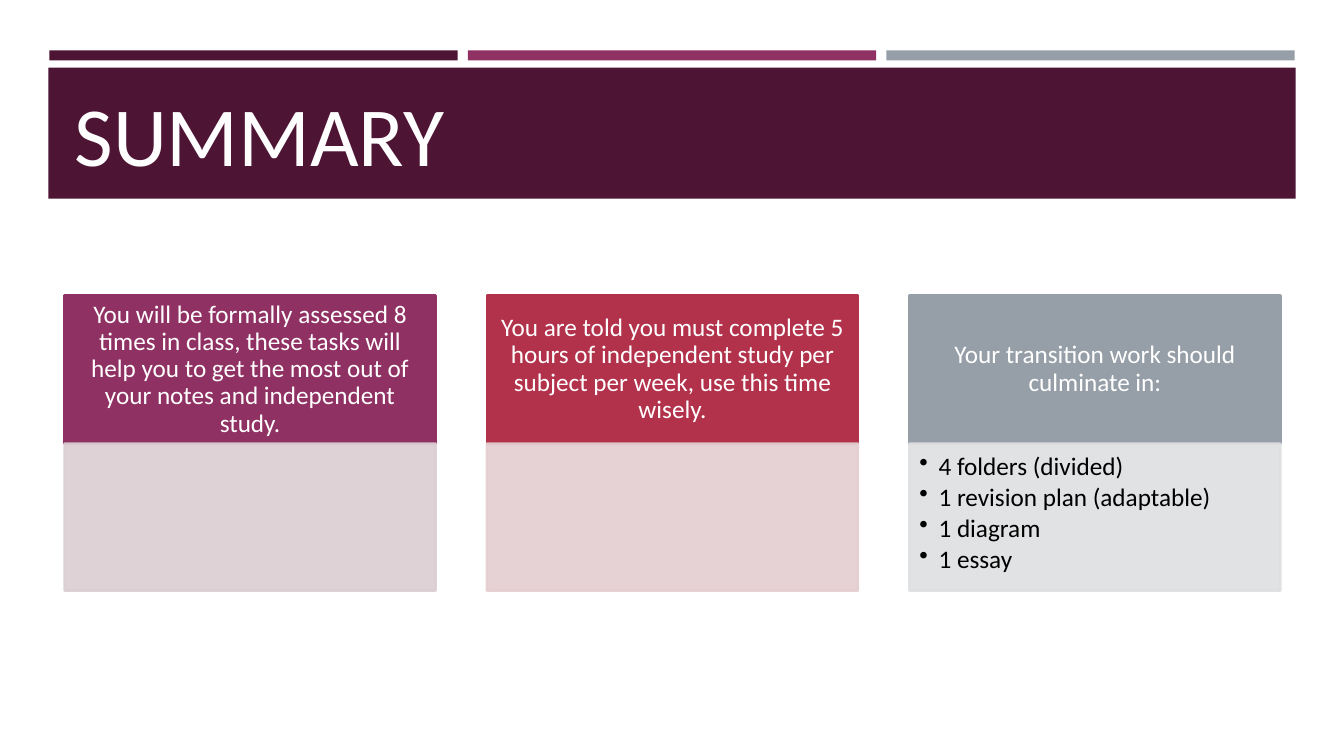
from lxml import etree
from pptx import Presentation
from pptx.dml.color import RGBColor
from pptx.enum import shapes, text
from pptx.oxml import ns
from pptx.util import Inches, Pt

COLORS = {
    "plum": "4D1434", "purple": "903163", "red": "B2324B", "grey": "969FA7",
    "pale_purple": "DBCED3", "pale_red": "E4CED0", "pale_grey": "DDDFE1",
    "title": "FFFEFF", "white": "FFFFFF", "black": "000000",
}
FONT = "Calibri"
TITLE = "SUMMARY"
STRIPES = ["plum", "purple", "grey"]
CARDS = [
    ("You will be formally assessed 8 times in class, these tasks will help you "
     "to get the most out of your notes and independent study.",
     "purple", "pale_purple", []),
    ("You are told you must complete 5 hours of independent study per subject "
     "per week, use this time wisely.",
     "red", "pale_red", []),
    ("Your transition work should culminate in:", "grey", "pale_grey",
     ["4 folders (divided)", "1 revision plan (adaptable)", "1 diagram", "1 essay"]),
]
STRIPE_LEFT, STRIPE_STEP = 0.49, 4.15
CARD_LEFT, CARD_STEP, CARD_WIDTH = 0.64, 4.19, 3.68
HEADER_TOP, HEADER_HEIGHT, BODY_HEIGHT = 2.93, 1.47, 1.46


def add_box(slide, place, color, outlined=False, alpha=None):
    """Add a flat rectangle, with an outline and transparency if asked."""
    shape = slide.shapes.add_shape(shapes.MSO_SHAPE.RECTANGLE, *map(Inches, place))
    shape.shadow.inherit = False
    rgb = RGBColor.from_string(COLORS[color])
    shape.fill.solid()
    shape.fill.fore_color.rgb = rgb
    if outlined:
        shape.line.color.rgb = rgb
        shape.line.width = Pt(1.75)
    else:
        shape.line.fill.background()
    if alpha:
        for node in shape._element.spPr.iter(ns.qn("a:srgbClr")):
            etree.SubElement(node, ns.qn("a:alpha"), val=str(alpha * 1000))
    return shape


def write(shape, lines, size, color, anchor, align, insets, spacing=0.9):
    """Fill a shape with evenly styled paragraphs."""
    frame = shape.text_frame
    frame.word_wrap = True
    frame.vertical_anchor = anchor
    (frame.margin_left, frame.margin_top,
     frame.margin_right, frame.margin_bottom) = map(Inches, insets)
    frame.text = "\n".join(lines)
    for paragraph in frame.paragraphs:
        paragraph.alignment = align
        paragraph.line_spacing = spacing
        paragraph.font.name = FONT
        paragraph.font.size = Pt(size)
        paragraph.font.color.rgb = RGBColor.from_string(COLORS[color])
    return frame.paragraphs


def add_bullet(paragraph):
    """Give a paragraph a round bullet with a hanging indent."""
    paragraph.space_after = Pt(2.7)
    properties = paragraph._p.get_or_add_pPr()
    properties.set("marL", str(Inches(0.19)))
    properties.set("indent", str(Inches(-0.19)))
    bullet = etree.Element(ns.qn("a:buChar"), char="•")
    properties.find(ns.qn("a:spcAft")).addnext(bullet)


def add_card(slide, left, heading, dark, pale, items):
    """Add a heading box with its pale body box below."""
    header = add_box(slide, (left, HEADER_TOP, CARD_WIDTH, HEADER_HEIGHT), dark, True)
    write(header, [heading], 18, "white", text.MSO_ANCHOR.MIDDLE,
          text.PP_ALIGN.CENTER, (0.14, 0.08, 0.14, 0.08))
    body_top = HEADER_TOP + HEADER_HEIGHT
    body = add_box(slide, (left, body_top, CARD_WIDTH, BODY_HEIGHT), pale, True, 90)
    if items:
        for paragraph in write(body, items, 18, "black", text.MSO_ANCHOR.TOP,
                               text.PP_ALIGN.LEFT, (0.1, 0.1, 0.14, 0.16)):
            add_bullet(paragraph)


def main():
    """Build the summary slide."""
    presentation = Presentation()
    presentation.slide_width = Inches(13.33)
    presentation.slide_height = Inches(7.5)
    slide = presentation.slides.add_slide(presentation.slide_layouts[6])
    for index, color in enumerate(STRIPES):
        add_box(slide, (STRIPE_LEFT + index * STRIPE_STEP, 0.5, 4.05, 0.1), color)
    add_box(slide, (0.48, 0.67, 12.37, 1.3), "plum")
    title = slide.shapes.add_textbox(*map(Inches, (0.64, 0.77, 12.06, 1.11)))
    write(title, [TITLE], 60, "title", text.MSO_ANCHOR.BOTTOM,
          text.PP_ALIGN.LEFT, (0.1, 0.05, 0.1, 0.05))
    for index, card in enumerate(CARDS):
        add_card(slide, CARD_LEFT + index * CARD_STEP, *card)
    presentation.save("out.pptx")


if __name__ == "__main__":
    main()
